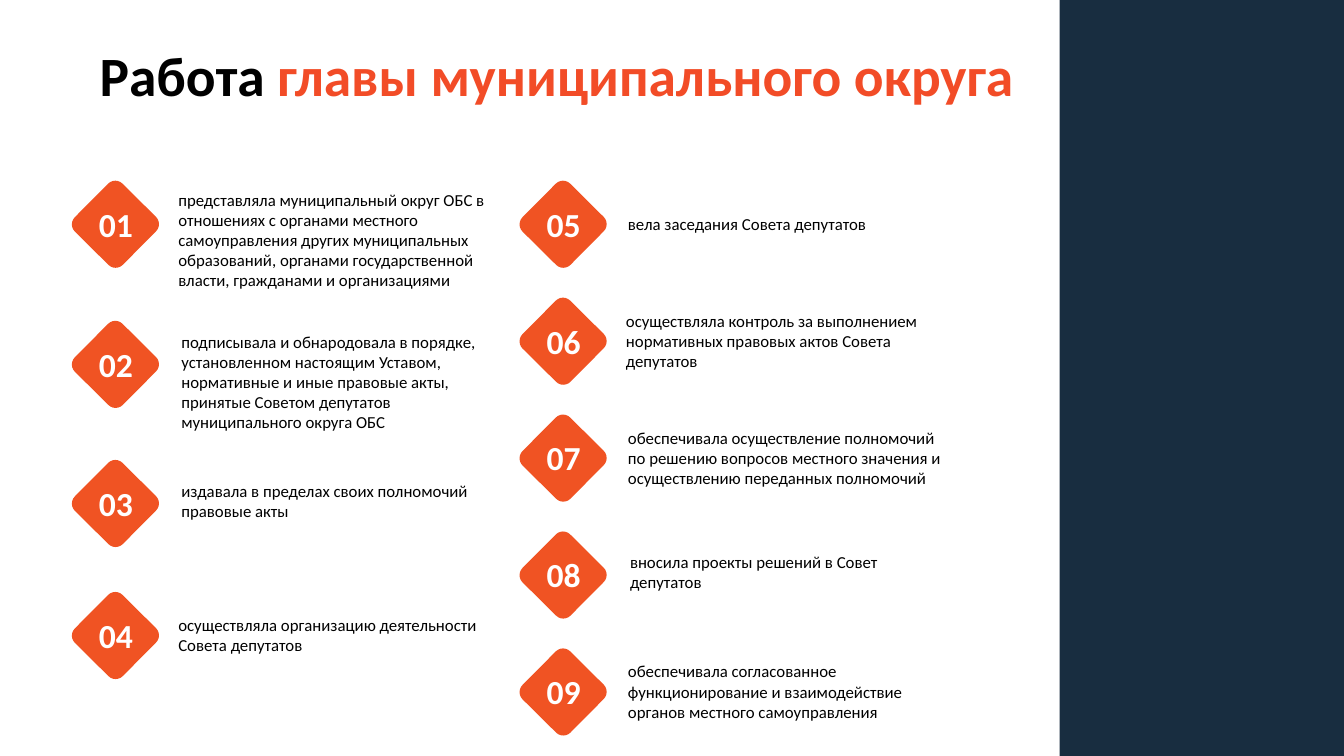
import pptx
import pptx.util
import pptx.dml.color
import pptx.enum.shapes
import pptx.enum.text

PX = 9144  # EMU, 100 px to the inch
FONT = "Calibri"
NAVY = pptx.dml.color.RGBColor(0x18, 0x2D, 0x40)
ORANGE = pptx.dml.color.RGBColor(0xF0, 0x53, 0x23)
TITLE_RED = pptx.dml.color.RGBColor(0xF2, 0x4C, 0x27)
BLACK = pptx.dml.color.RGBColor(0, 0, 0)
WHITE = pptx.dml.color.RGBColor(255, 255, 255)

SHAPE = pptx.enum.shapes.MSO_SHAPE
ALIGN = pptx.enum.text.PP_ALIGN
ANCHOR = pptx.enum.text.MSO_ANCHOR

DIAMOND = 67
RIGHT_TOP, RIGHT_STEP = 189, 116

# diamond top, text left, text top, text height, text
LEFT_ITEMS = [
    (189, 167, 183, 111, "представляла муниципальный округ ОБС в отношениях с органами "
     "местного самоуправления других муниципальных образований, органами "
     "государственной власти, гражданами и организациями"),
    (328, 170, 324, 111, "подписывала и обнародовала в порядке, установленном настоящим "
     "Уставом, нормативные и иные правовые акты, принятые Советом депутатов "
     "муниципального округа ОБС"),
    (466, 170, 472, 50, "издавала в пределах своих полномочий правовые акты"),
    (597, 167, 605, 50, "осуществляла организацию деятельности Совета депутатов"),
]
# text left, text top, text height, text
RIGHT_ITEMS = [
    (613, 207, 30, "вела заседания Совета депутатов"),
    (611, 303, 71, "осуществляла контроль за выполнением нормативных правовых "
     "актов Совета депутатов"),
    (613, 419, 71, "обеспечивала осуществление полномочий по решению вопросов "
     "местного значения и осуществлению переданных полномочий"),
    (615, 542, 50, "вносила проекты решений в Совет депутатов"),
    (613, 651, 71, "обеспечивала согласованное функционирование и взаимодействие "
     "органов местного самоуправления"),
]


def px(*lengths):
    return [pptx.util.Emu(n * PX) for n in lengths]


def add_block(s, kind, box, fill):
    sp = s.shapes.add_shape(kind, *px(*box))
    sp.shadow.inherit = False
    sp.fill.solid()
    sp.fill.fore_color.rgb = fill
    sp.line.fill.background()
    return sp


def add_text(s, box, runs, size=12, bold=False, align=ALIGN.LEFT,
             anchor=ANCHOR.TOP, wrap=True, spacing=None):
    """Add a one-paragraph text box; runs are (text, colour) pairs."""
    tf = s.shapes.add_textbox(*px(*box)).text_frame
    tf.word_wrap = wrap
    tf.vertical_anchor = anchor
    p = tf.paragraphs[0]
    p.alignment = align
    p.line_spacing = spacing
    for text, colour in runs:
        r = p.add_run()
        r.text = text
        r.font.name = FONT
        r.font.size = pptx.util.Pt(size)
        r.font.bold = bold
        r.font.color.rgb = colour


def add_item(s, number, left, top, text_left, text_top, text_height, text):
    diamond = add_block(s, SHAPE.ROUNDED_RECTANGLE, (left, top, DIAMOND, DIAMOND), ORANGE)
    diamond.rotation = 44.8
    diamond.adjustments[0] = 0.15
    add_text(s, (left + 7, top + 8, 54, 50), [(f"{number:02}", WHITE)],
             size=24, bold=True, align=ALIGN.CENTER, wrap=False)
    add_text(s, (text_left, text_top, 332, text_height), [(text, BLACK)])


def main():
    prs = pptx.Presentation()
    prs.slide_width, prs.slide_height = px(1333, 750)
    s = prs.slides.add_slide(prs.slide_layouts[6])

    add_block(s, SHAPE.RECTANGLE, (1051, 0, 282, 750), NAVY)
    add_text(s, (89, 41, 930, 73),
             [("Работа ", BLACK), ("главы муниципального округа", TITLE_RED)],
             size=39.6, bold=True, anchor=ANCHOR.MIDDLE, spacing=0.9)

    for number, (top, *item) in enumerate(LEFT_ITEMS, 1):
        add_item(s, number, 81, top, *item)
    for row, item in enumerate(RIGHT_ITEMS):
        add_item(s, len(LEFT_ITEMS) + 1 + row, 525, RIGHT_TOP + row * RIGHT_STEP, *item)

    prs.save("out.pptx")


if __name__ == "__main__":
    main()
